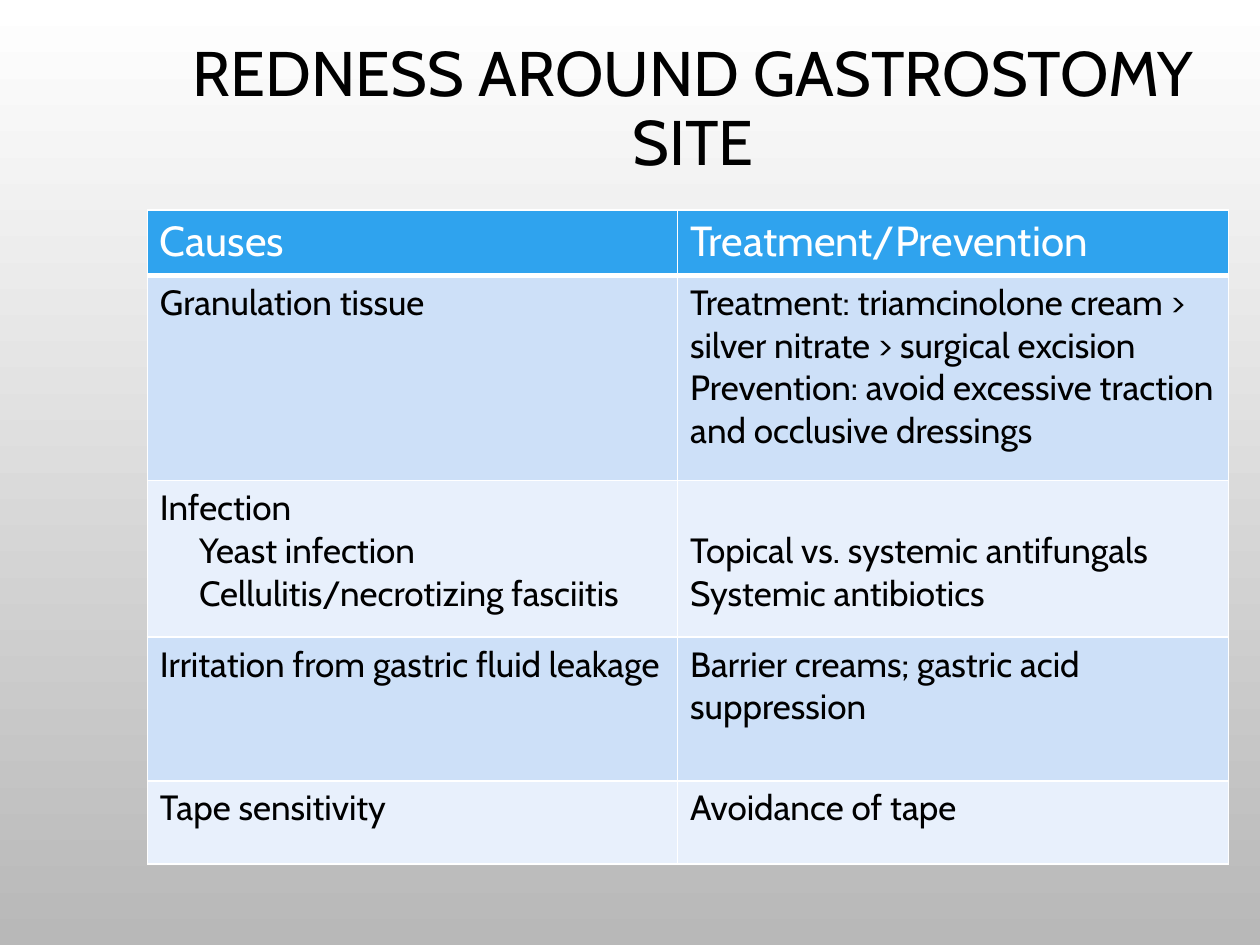
"""Build the slide on redness around a gastrostomy site."""
from lxml import etree
from pptx import Presentation
from pptx import util as u
from pptx.dml.color import RGBColor
from pptx.enum import text
from pptx.oxml.ns import qn

TITLE = "REDNESS AROUND GASTROSTOMY SITE"
HEADINGS = (["Causes"], ["Treatment/Prevention"])
CAUSES = [
    (["Granulation tissue"],
     ["Treatment: triamcinolone cream > silver nitrate > surgical excision",
      "Prevention: avoid excessive traction and occlusive dressings"]),
    (["Infection", "Yeast infection", "Cellulitis/necrotizing fasciitis"],
     ["Topical vs. systemic antifungals", "Systemic antibiotics"]),
    (["Irritation from gastric fluid leakage"],
     ["Barrier creams; gastric acid suppression"]),
    (["Tape sensitivity"], ["Avoidance of tape"]),
]
SUBTYPES = CAUSES[1][0][1:]
SUBTYPE_TREATMENTS = CAUSES[1][1]
COLUMN_WIDTHS = [10.69, 11.1]
ROW_HEIGHTS = [1.32, 4.14, 3.15, 2.9, 1.68]
COLORS = {"black": "000000", "white": "FFFFFF", "gray": "B8B8B8",
          "blue": "2FA3EE", "band": "CDE0F8", "pale": "E8F0FC"}


def rgb(color):
    """Return the named colour."""
    return RGBColor.from_string(COLORS[color])


def write(paragraph, words, size=20, color="black", align=None,
          spacing=None, indent=0):
    """Put formatted words into a paragraph."""
    if indent:
        paragraph._p.get_or_add_pPr().set("marL", str(u.Cm(indent)))
    paragraph.alignment = align
    paragraph.line_spacing = spacing
    run = paragraph.add_run()
    run.text = words
    run.font.name = "Cabin"
    run.font.size = u.Pt(size)
    run.font.color.rgb = rgb(color)


def draw_borders(cell, top, bottom):
    """Draw white borders around a cell, widths in points."""
    properties = cell._tc.get_or_add_tcPr()
    widths = {"a:lnL": 1, "a:lnR": 1, "a:lnT": top, "a:lnB": bottom}
    for position, (side, width) in enumerate(widths.items()):
        line = etree.Element(qn(side), w=str(u.Pt(width)))
        fill = etree.SubElement(line, qn("a:solidFill"))
        etree.SubElement(fill, qn("a:srgbClr"), val=COLORS["white"])
        properties.insert(position, line)


def add_title(slide):
    """Place the title in its placeholder."""
    title = slide.shapes.title
    title.left, title.top = u.Cm(3.18), u.Cm(0.64)
    title.width, title.height = u.Cm(21.59), u.Cm(3.18)
    frame = title.text_frame
    frame.auto_size = text.MSO_AUTO_SIZE.NONE
    frame.vertical_anchor = text.MSO_ANCHOR.MIDDLE
    write(frame.paragraphs[0], TITLE, size=36,
          align=text.PP_ALIGN.CENTER, spacing=0.9)


def add_causes(slide):
    """Add the table of causes and treatments."""
    rows = [HEADINGS] + CAUSES
    table = slide.shapes.add_table(
        len(rows), len(HEADINGS), u.Cm(2.97), u.Cm(4.23),
        u.Cm(sum(COLUMN_WIDTHS)), u.Cm(sum(ROW_HEIGHTS))).table
    for column, width in zip(table.columns, COLUMN_WIDTHS):
        column.width = u.Cm(width)
    for r, (row, height) in enumerate(zip(rows, ROW_HEIGHTS)):
        table.rows[r].height = u.Cm(height)
        heading = r == 0
        fill = "blue" if heading else "band" if r % 2 else "pale"
        for c, lines in enumerate(row):
            cell = table.cell(r, c)
            cell.fill.solid()
            cell.fill.fore_color.rgb = rgb(fill)
            draw_borders(cell, top=3 if r == 1 else 1,
                         bottom=3 if heading else 1)
            if lines is SUBTYPE_TREATMENTS:
                cell.margin_top = u.Cm(0.99)
            frame = cell.text_frame
            for i, words in enumerate(lines):
                paragraph = frame.add_paragraph() if i else frame.paragraphs[0]
                write(paragraph, words, size=24 if heading else 20,
                      color="white" if heading else "black",
                      indent=0.79 if words in SUBTYPES else 0)


def main():
    """Build and save the slide."""
    deck = Presentation()
    deck.slide_width, deck.slide_height = u.Cm(25.4), u.Cm(19.05)
    slide = deck.slides.add_slide(deck.slide_layouts[5])
    backdrop = slide.background.fill
    backdrop.gradient()
    backdrop.gradient_angle = 270
    for stop, color in zip(backdrop.gradient_stops, ("white", "gray")):
        stop.color.rgb = rgb(color)
    add_title(slide)
    add_causes(slide)
    deck.save("out.pptx")


if __name__ == "__main__":
    main()
